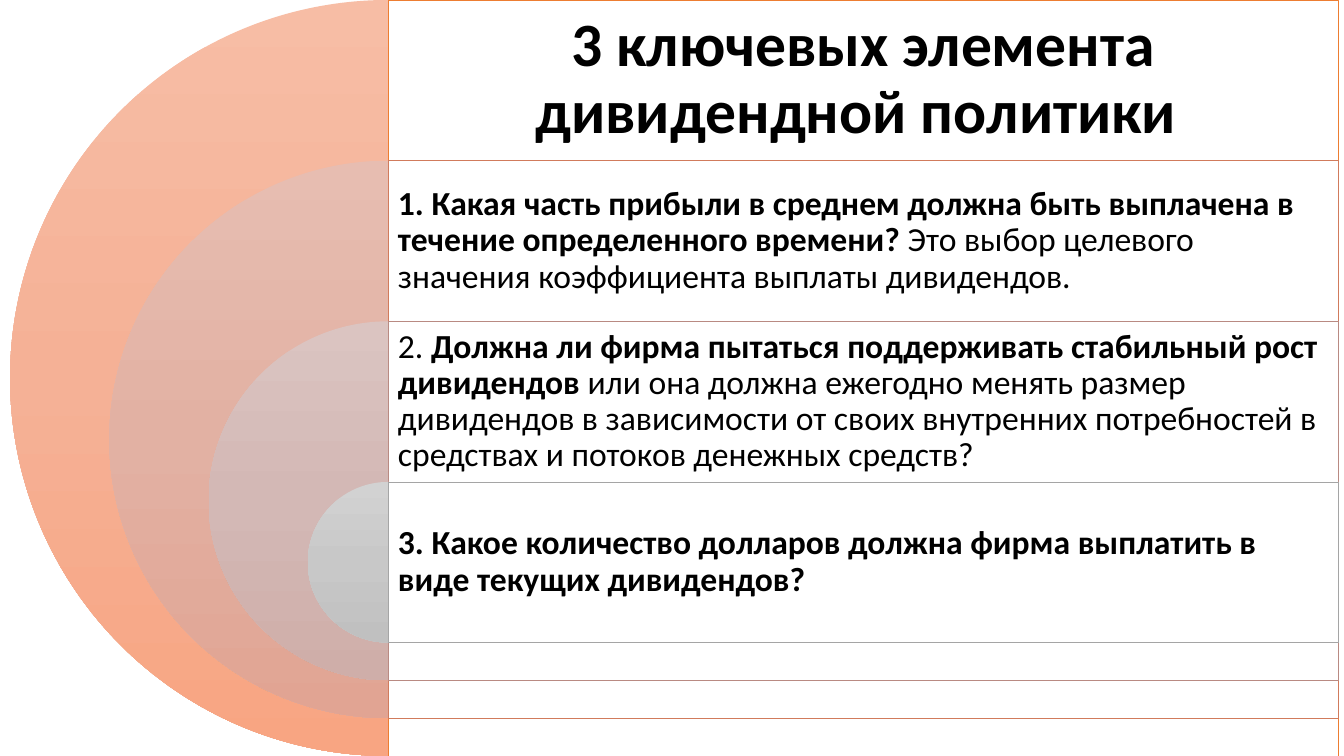
from copy import deepcopy
from dataclasses import dataclass

from lxml import etree
from pptx import Presentation
from pptx.dml.color import RGBColor
from pptx.enum.shapes import MSO_SHAPE
from pptx.enum.text import MSO_ANCHOR, PP_ALIGN
from pptx.oxml.ns import qn
from pptx.util import Pt

PIE, RECT = MSO_SHAPE.CHORD.PIE, MSO_SHAPE.RECTANGLE
MIDDLE = MSO_ANCHOR.MIDDLE
LEFT, CENTER = PP_ALIGN.LEFT, PP_ALIGN.CENTER

SLIDE_W, SLIDE_H = 960, 540
AXIS_X = 277.2  # flat edge of the half circles, left edge of the rows
ROW_W, ROW_H = 679, 114.75
SIZE_STEP = 141.75  # each half circle is this much smaller than the one before


@dataclass
class Level:
    gradient: tuple[str, str, str]
    line: str
    runs: list[tuple[str, bool]]
    size: float = 24
    inset: float = 7.2
    align: PP_ALIGN = LEFT


LEVELS = [
    Level(("F7BDA5", "F5B196", "F8A582"), "ED7D31",
          [("3 ключевых элемента дивидендной политики ", True)],
          size=44, inset=13.2, align=CENTER),
    Level(("E7BDB1", "E2B1A3", "E1A493"), "D17B5C",
          [("1. Какая часть прибыли в среднем должна быть выплачена "
            "в течение определенного времени? ", True),
           ("Это выбор целевого значения коэффициента выплаты дивидендов.", False)]),
    Level(("DBC4C1", "D3B8B5", "CFAEA9"), "B98A82",
          [("2. ", False),
           ("Должна ли фирма пытаться поддерживать стабильный рост дивидендов", True),
           (" или она должна ежегодно менять размер дивидендов в зависимости "
            "от своих внутренних потребностей в средствах и потоков "
            "денежных средств?", False)]),
    Level(("D2D2D2", "C8C8C8", "C0C0C0"), "A5A5A5",
          [("3. Какое количество долларов должна фирма выплатить "
            "в виде текущих дивидендов?", True)]),
]


def rgb(color: str) -> RGBColor:
    return RGBColor.from_string(color)


def add_half_circle(shapes, level: Level, top: float, size: float) -> None:
    s = shapes.add_shape(PIE, Pt(AXIS_X - size / 2), Pt(top), Pt(size), Pt(size))
    s.shadow.inherit = False
    s.adjustments[0], s.adjustments[1] = 54, 162  # 90 to 270 degrees
    s.line.fill.background()
    s.fill.gradient()
    s.fill.gradient_angle = 270
    stop_list = s._element.spPr.find(f".//{qn('a:gsLst')}")
    stop_list.append(deepcopy(stop_list[-1]))
    for i, (stop, color) in enumerate(zip(s.fill.gradient_stops, level.gradient)):
        stop.position = i / 2
        stop.color.rgb = rgb(color)


def add_panel(shapes, level: Level, top: float, height: float) -> None:
    """Add the outlined, slightly transparent white rectangle of a level."""
    s = shapes.add_shape(RECT, Pt(AXIS_X), Pt(top), Pt(ROW_W), Pt(height))
    s.shadow.inherit = False
    s.fill.solid()
    s.fill.fore_color.rgb = rgb("FFFFFF")
    color = s._element.spPr.find(f"{qn('a:solidFill')}/{qn('a:srgbClr')}")
    etree.SubElement(color, qn("a:alpha"), val="90000")
    s.line.color.rgb = rgb(level.line)
    s.line.width = Pt(0.5)


def add_row_text(shapes, level: Level, top: float) -> None:
    tf = shapes.add_textbox(Pt(AXIS_X), Pt(top), Pt(ROW_W), Pt(ROW_H)).text_frame
    tf.word_wrap = True
    tf.vertical_anchor = MIDDLE
    tf.margin_left = tf.margin_right = Pt(level.inset)
    tf.margin_top = tf.margin_bottom = Pt(level.inset)
    p = tf.paragraphs[0]
    p.alignment = level.align
    p.line_spacing = 0.9
    for text, bold in level.runs:
        r = p.add_run()
        r.text = text
        r.font.name = "Calibri"
        r.font.size = Pt(level.size)
        r.font.bold = bold
        r.font.color.rgb = rgb("000000")


def main() -> None:
    prs = Presentation()
    prs.slide_width, prs.slide_height = Pt(SLIDE_W), Pt(SLIDE_H)
    shapes = prs.slides.add_slide(prs.slide_layouts[6]).shapes
    for i, level in enumerate(LEVELS):
        top, size = i * ROW_H, SLIDE_H - i * SIZE_STEP
        add_half_circle(shapes, level, top, size)
        add_panel(shapes, level, top, size)
        add_row_text(shapes, level, top)
    prs.save("out.pptx")


if __name__ == "__main__":
    main()
